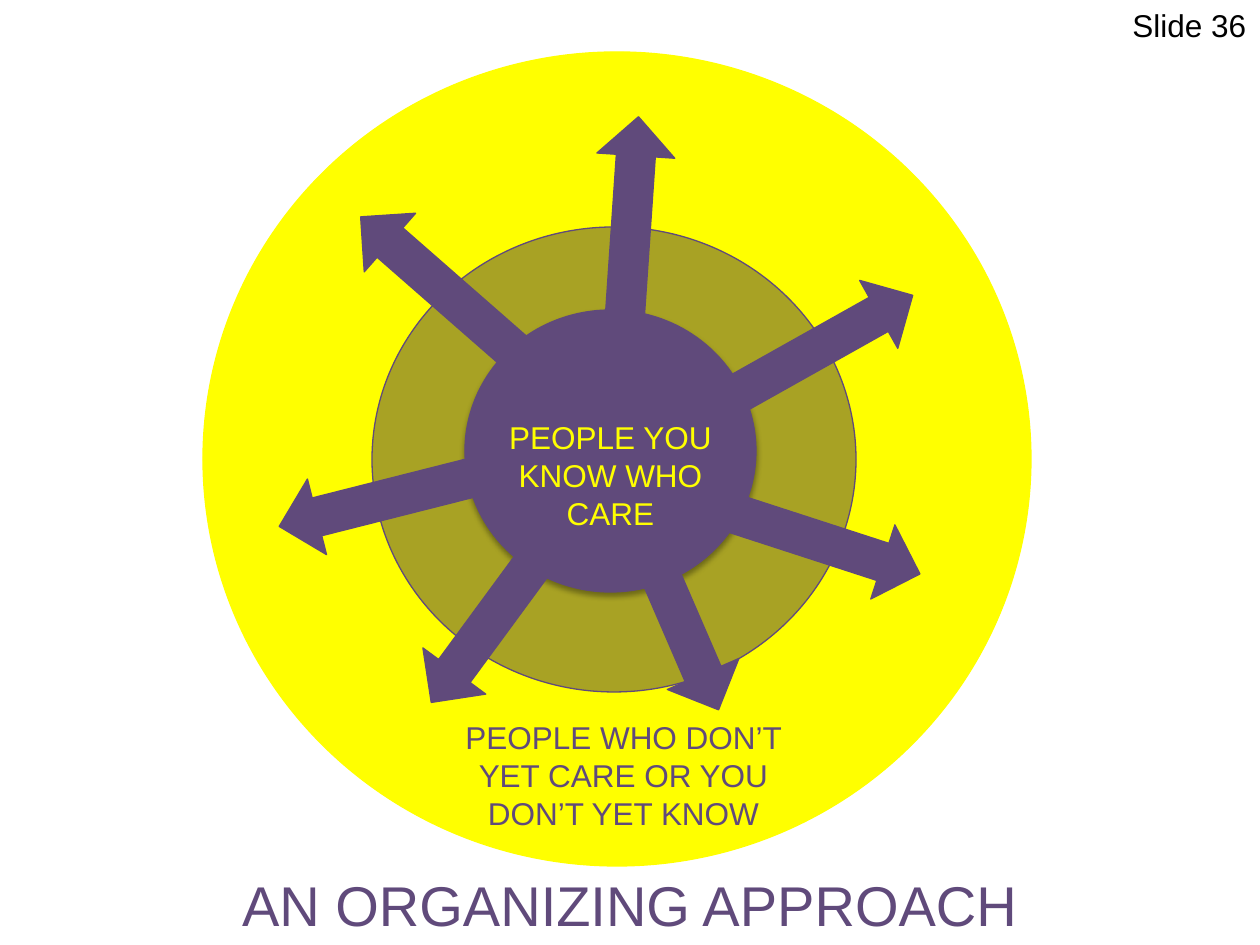
import pptx
import pptx.util
import pptx.dml.color
import pptx.enum.shapes
import pptx.enum.text
import pptx.oxml
import pptx.oxml.ns

THEME = {
    "purple": "604A7B", "dark": "403152", "yellow": "FFFF00", "black": "000000",
    "font": "Arial", "body": 18, "title": 32, "line": 0.75,
}
PX = 914400 / 126
SHAPE = pptx.enum.shapes.MSO_SHAPE
ALIGN = pptx.enum.text.PP_ALIGN

OUTER = ((203, 52, 828, 814), "yellow", "yellow")
RING = ((372, 227, 484, 465), "dark", "purple")
CORE = ((465, 310, 291, 282), "purple", "purple")

ARROW_HEIGHT = 78
ARROWS = [
    (528, 181, 207, 273.9),
    (718, 503, 207, 18),
    (719, 307, 207, 330.7),
    (335, 246, 207, 221.2),
    (276, 462, 207, 165.8),
    (389, 580, 207, 126.3),
    (597, 591, 174, 66.6),
]

CIRCLE_LABELS = [
    ("PEOPLE WHO DON’T YET CARE OR YOU DON’T YET KNOW",
     (423, 712, 401, 127), "body", "purple", ALIGN.CENTER),
    ("PEOPLE YOU KNOW WHO CARE",
     (465, 412, 291, 127), "body", "yellow", ALIGN.CENTER),
]
PAGE_LABELS = [
    ("AN ORGANIZING APPROACH",
     (0, 864, 1260, 81), "title", "purple", ALIGN.CENTER),
    ("Slide 36", (1120, 0, 140, 50), "body", "black", ALIGN.LEFT),
]


def px(*values):
    return [pptx.util.Emu(round(v * PX)) for v in values]


def color(name):
    return pptx.dml.color.RGBColor.from_string(THEME[name])


def add_shape(s, kind, box, fill, line):
    sp = s.shapes.add_shape(kind, *px(*box))
    sp.shadow.inherit = False
    sp.fill.solid()
    sp.fill.fore_color.rgb = color(fill)
    sp.line.color.rgb = color(line)
    sp.line.width = pptx.util.Pt(THEME["line"])
    return sp


def add_label(s, text, box, size, ink, align):
    tf = s.shapes.add_textbox(*px(*box)).text_frame
    tf.word_wrap = True
    tf.auto_size = pptx.enum.text.MSO_AUTO_SIZE.SHAPE_TO_FIT_TEXT
    p = tf.paragraphs[0]
    p.alignment = align
    r = p.add_run()
    r.text = text
    font = {"name": THEME["font"], "size": pptx.util.Pt(THEME[size])}
    for name, value in font.items():
        setattr(r.font, name, value)
    r.font.color.rgb = color(ink)


def set_opacity(sp, percent):
    clr = sp.fill._xPr.find(".//" + pptx.oxml.ns.qn("a:srgbClr"))
    clr.append(pptx.oxml.parse_xml(
        f'<a:alpha {pptx.oxml.ns.nsdecls("a")} val="{percent * 1000}"/>'))


def add_shadow(sp, blur, distance, angle, percent):
    effects = sp._element.spPr.find(pptx.oxml.ns.qn("a:effectLst"))
    effects.append(pptx.oxml.parse_xml(
        f'<a:outerShdw {pptx.oxml.ns.nsdecls("a")} '
        f'blurRad="{pptx.util.Pt(blur)}" dist="{pptx.util.Pt(distance)}" '
        f'dir="{angle * 60000}" rotWithShape="0">'
        f'<a:srgbClr val="{THEME["black"]}"><a:alpha val="{percent * 1000}"/>'
        '</a:srgbClr></a:outerShdw>'))


def main():
    prs = pptx.Presentation()
    prs.slide_width, prs.slide_height = px(1260, 945)
    s = prs.slides.add_slide(prs.slide_layouts[6])

    add_shape(s, SHAPE.OVAL, *OUTER)
    set_opacity(add_shape(s, SHAPE.OVAL, *RING), 45)
    add_shadow(add_shape(s, SHAPE.OVAL, *CORE), 3.1, 1.8, 90, 35)

    for label in CIRCLE_LABELS:
        add_label(s, *label)
    for left, top, width, angle in ARROWS:
        box = (left, top, width, ARROW_HEIGHT)
        sp = add_shape(s, SHAPE.RIGHT_ARROW, box, "purple", "purple")
        sp.rotation = angle
    for label in PAGE_LABELS:
        add_label(s, *label)

    prs.save("out.pptx")


if __name__ == "__main__":
    main()
